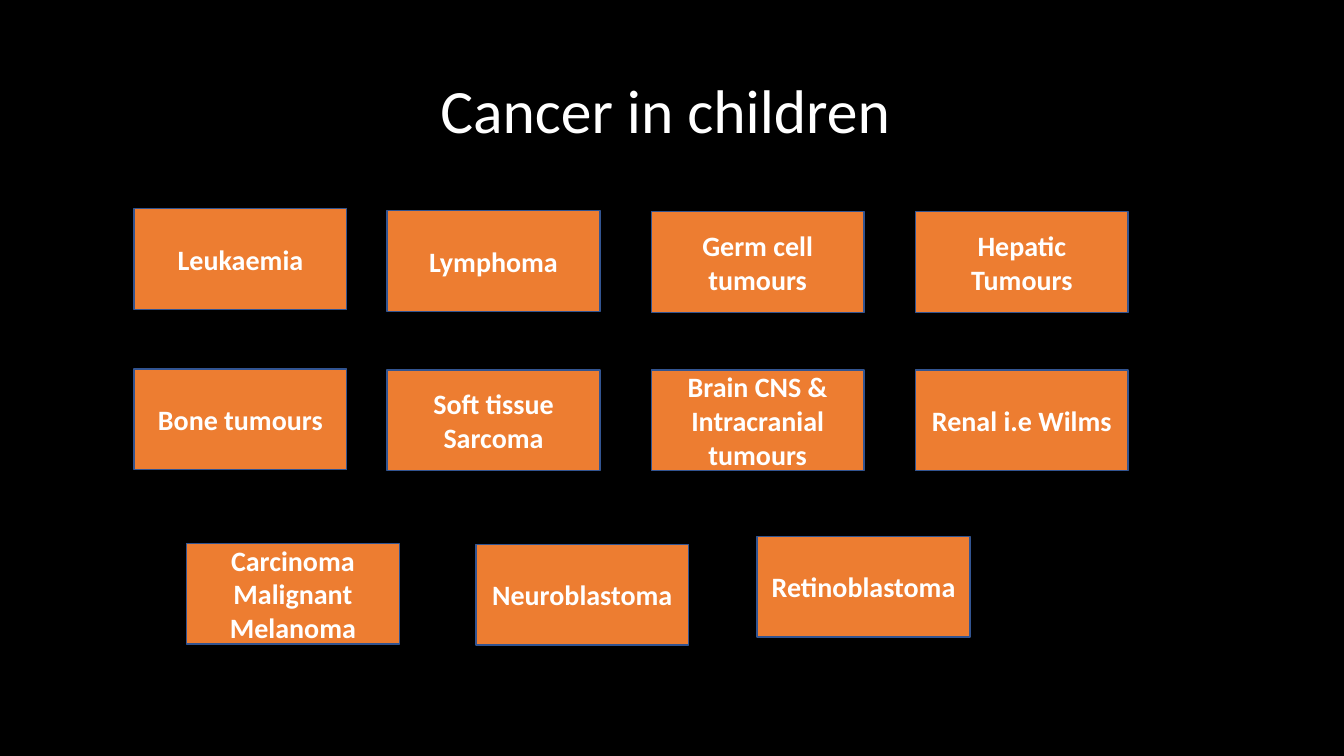
import pptx
import pptx.dml.color
import pptx.enum.shapes
import pptx.enum.text
import pptx.util

BLACK = pptx.dml.color.RGBColor(0x00, 0x00, 0x00)
WHITE = pptx.dml.color.RGBColor(0xFF, 0xFF, 0xFF)
ORANGE = pptx.dml.color.RGBColor(0xED, 0x7D, 0x31)
BLUE = pptx.dml.color.RGBColor(0x32, 0x54, 0x91)

SLIDE_WIDTH, SLIDE_HEIGHT = 13.33, 7.5
TITLE_BOX = (0.92, 0.4, 11.5, 1.45)
CARD_WIDTH, CARD_HEIGHT = 2.11, 1
COLUMNS = (1.33, 3.84, 6.46, 9.08)
LAST_ROW_COLUMNS = (1.85, 4.72, 7.51)

# Each row: left edges, top edges, labels
CARD_ROWS = (
    (COLUMNS, (2.07, 2.09, 2.1, 2.1),
     ("Leukaemia", "Lymphoma", "Germ cell tumours", "Hepatic Tumours")),
    (COLUMNS, (3.66, 3.67, 3.67, 3.67),
     ("Bone tumours", "Soft tissue Sarcoma",
      "Brain CNS & Intracranial tumours", "Renal i.e Wilms")),
    (LAST_ROW_COLUMNS, (5.39, 5.4, 5.32),
     ("Carcinoma\nMalignant Melanoma", "Neuroblastoma", "Retinoblastoma")),
)


def write_text(shape, text, *, size, bold=False, line_spacing=1.0):
    """Fill a shape with centred white text, one paragraph per line."""
    frame = shape.text_frame
    frame.text = text
    frame.word_wrap = True
    frame.auto_size = pptx.enum.text.MSO_AUTO_SIZE.NONE
    frame.vertical_anchor = pptx.enum.text.MSO_ANCHOR.MIDDLE
    for paragraph in frame.paragraphs:
        paragraph.alignment = pptx.enum.text.PP_ALIGN.CENTER
        paragraph.line_spacing = line_spacing
        for run in paragraph.runs:
            run.font.name = "Calibri"
            run.font.size = pptx.util.Pt(size)
            run.font.bold = bold
            run.font.color.rgb = WHITE


def add_title(slide, box):
    title = slide.shapes.title
    title.left, title.top, title.width, title.height = map(pptx.util.Inches, box)
    write_text(title, "Cancer in children ", size=44, line_spacing=0.9)


def add_card(slide, box, label):
    card = slide.shapes.add_shape(
        pptx.enum.shapes.MSO_SHAPE.RECTANGLE, *map(pptx.util.Inches, box))
    card.shadow.inherit = False
    card.fill.solid()
    card.fill.fore_color.rgb = ORANGE
    card.line.color.rgb = BLUE
    card.line.width = pptx.util.Pt(1)
    write_text(card, label, size=20, bold=True)


def add_cards(slide):
    for lefts, tops, labels in CARD_ROWS:
        for left, top, label in zip(lefts, tops, labels):
            add_card(slide, (left, top, CARD_WIDTH, CARD_HEIGHT), label)


def main():
    presentation = pptx.Presentation()
    presentation.slide_width = pptx.util.Inches(SLIDE_WIDTH)
    presentation.slide_height = pptx.util.Inches(SLIDE_HEIGHT)

    # Title-only slide on black
    slide = presentation.slides.add_slide(presentation.slide_layouts[5])
    slide.background.fill.solid()
    slide.background.fill.fore_color.rgb = BLACK

    add_title(slide, TITLE_BOX)
    add_cards(slide)
    presentation.save("out.pptx")


if __name__ == "__main__":
    main()
